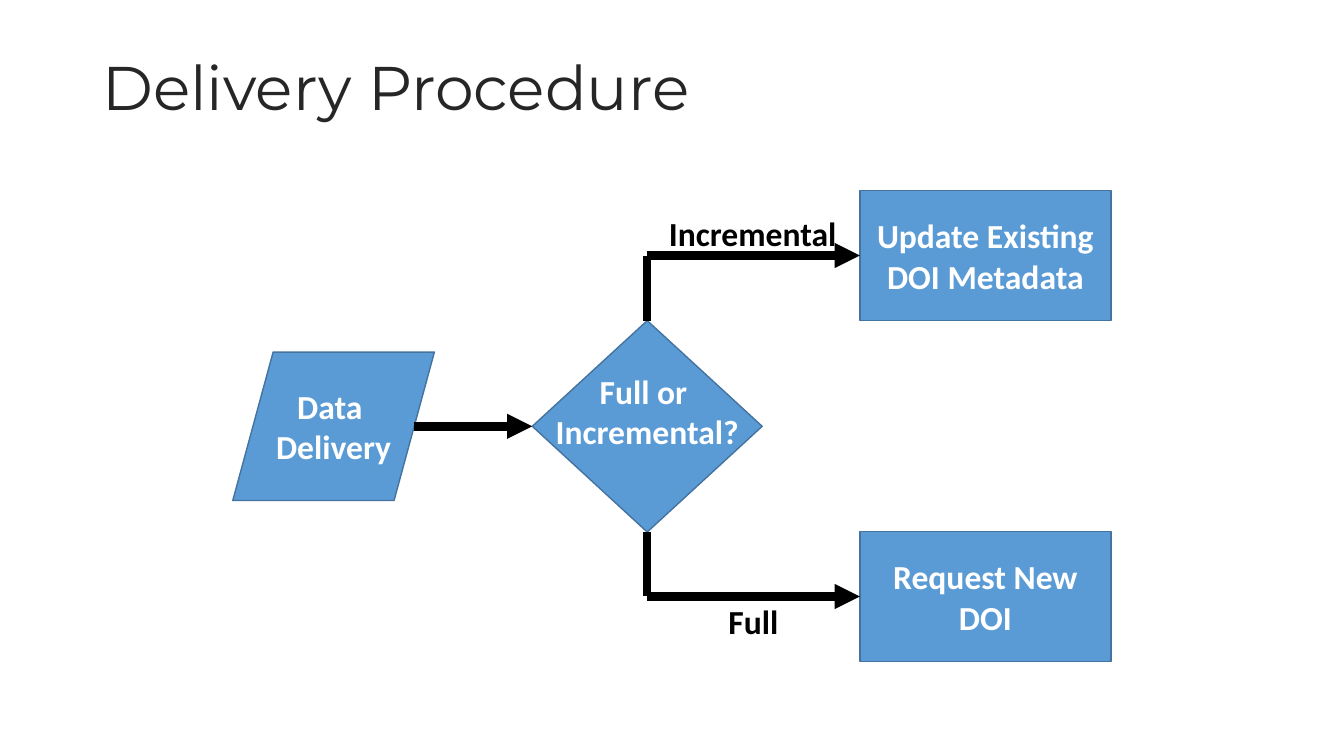
"""Builds the delivery procedure flowchart slide."""
from lxml.etree import SubElement
from pptx import Presentation
from pptx.dml.color import RGBColor
from pptx.enum.shapes import MSO_CONNECTOR as Link, MSO_SHAPE as Shape
from pptx.enum.text import MSO_ANCHOR as Anchor, PP_ALIGN as Align
from pptx.oxml.ns import qn
from pptx.util import Pt

COLORS = {"title": "262626", "step": "5B9BD5", "edge": "43739E",
          "step_text": "FFFFFF", "flow": "000000"}
TITLE = "Delivery Procedure"
TITLE_BOX = (66, 28.8, 828, 72)
OUTCOME_LEFT, OUTCOME_SIZE = 614.2, (179.3, 92.9)
STEPS = {
    "delivery": (Shape.FLOWCHART_DATA, (166.3, 251.5, 144, 106),
                 ["Data ", "Delivery"], False, (7.2, 3.6, 7.2, 3.6)),
    "decision": (Shape.FLOWCHART_DECISION, (380.2, 229, 164.2, 151),
                 ["Full or ", "Incremental?"], False, (0, 3.6, 0, 25.6)),
    "update": (Shape.FLOWCHART_PROCESS, (OUTCOME_LEFT, 136.1, *OUTCOME_SIZE),
               ["Update Existing DOI Metadata"], True, (7.2, 3.6, 7.2, 3.6)),
    "request": (Shape.FLOWCHART_PROCESS, (OUTCOME_LEFT, 379.6, *OUTCOME_SIZE),
                ["Request New DOI"], True, (7.2, 3.6, 7.2, 3.6)),
}
BRANCH_LABELS = [("Full", (513.3, 425.7, 50.5, 36.4)),
                 ("Incremental", (470.7, 148.6, 135, 36.4))]
DATA_SLANT = 0.1


def rgb(role):
    """Return the colour of a role."""
    return RGBColor.from_string(COLORS[role])


def write(frame, lines, font, size, role, bold, align, wrap):
    """Fill a text frame with one run per line."""
    frame.word_wrap = wrap
    frame.vertical_anchor = Anchor.MIDDLE
    for index, line in enumerate(lines):
        paragraph = frame.add_paragraph() if index else frame.paragraphs[0]
        paragraph.alignment = align
        run = paragraph.add_run()
        run.text = line
        run.font.name, run.font.size, run.font.bold = font, Pt(size), bold
        run.font.color.rgb = rgb(role)


def add_step(slide, kind, box, lines, wrap, insets):
    """Add one flowchart step."""
    step = slide.shapes.add_shape(kind, *map(Pt, box))
    step.shadow.inherit = False
    step.fill.solid()
    step.fill.fore_color.rgb = rgb("step")
    step.line.color.rgb = rgb("edge")
    step.line.width = Pt(1)
    frame = step.text_frame
    (frame.margin_left, frame.margin_top,
     frame.margin_right, frame.margin_bottom) = map(Pt, insets)
    write(frame, lines, "Calibri", 24, "step_text", True, Align.CENTER, wrap)


def add_flow(slide, start, end, arrow):
    """Add a thick flow line, with an arrowhead if asked."""
    flow = slide.shapes.add_connector(Link.STRAIGHT, *map(Pt, (*start, *end)))
    flow.line.color.rgb = rgb("flow")
    flow.line.width = Pt(6)
    if arrow:
        SubElement(flow.line._get_or_add_ln(), qn("a:tailEnd"), type="triangle")
    SubElement(flow._element.spPr, qn("a:effectLst"))


def main():
    """Build and save the slide."""
    deck = Presentation()
    deck.slide_width, deck.slide_height = Pt(960), Pt(540)
    slide = deck.slides.add_slide(deck.slide_layouts[6])

    title = slide.shapes.add_textbox(*map(Pt, TITLE_BOX)).text_frame
    write(title, [TITLE], "Montserrat", 44, "title", False, Align.LEFT, True)
    title.paragraphs[0].line_spacing = 0.9

    for step in STEPS.values():
        add_step(slide, *step)

    data_x, data_y, data_w, data_h = STEPS["delivery"][1]
    fork_x, fork_y, fork_w, fork_h = STEPS["decision"][1]
    fork_center, fork_middle = fork_x + fork_w / 2, fork_y + fork_h / 2
    add_flow(slide, (data_x + data_w * (1 - DATA_SLANT), fork_middle),
             (fork_x, fork_middle), True)
    for outcome, exit_y in (("update", fork_y), ("request", fork_y + fork_h)):
        left, top, _, height = STEPS[outcome][1]
        corner = (fork_center, top + height / 2)
        add_flow(slide, corner, (left, corner[1]), True)
        add_flow(slide, (fork_center, exit_y), corner, False)

    for label, box in BRANCH_LABELS:
        frame = slide.shapes.add_textbox(*map(Pt, box)).text_frame
        write(frame, [label], "Calibri", 24, "flow", True, Align.LEFT, False)

    deck.save("out.pptx")


if __name__ == "__main__":
    main()
